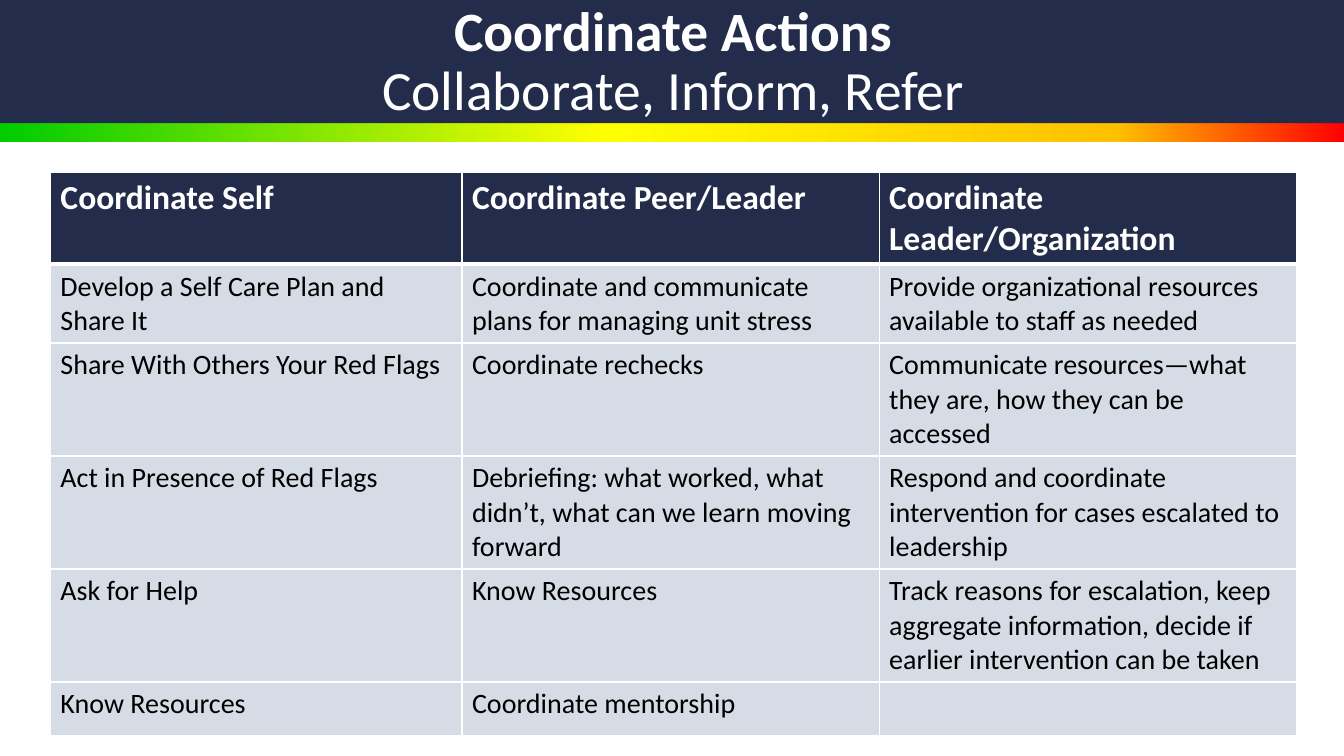
from lxml.etree import SubElement
from pptx import Presentation
from pptx.dml.color import RGBColor
from pptx.enum.shapes import MSO_SHAPE
from pptx.enum.text import MSO_ANCHOR, MSO_AUTO_SIZE, PP_ALIGN
from pptx.oxml.ns import qn
from pptx.util import Pt

# Content
TITLE = "Coordinate Actions"
SUBTITLE = "Collaborate, Inform, Refer"
ROWS = [
    ("Coordinate Self", "Coordinate Peer/Leader", "Coordinate Leader/Organization"),
    ("Develop a Self Care Plan and Share It",
     "Coordinate and communicate plans for managing unit stress",
     "Provide organizational resources available to staff as needed"),
    ("Share With Others Your Red Flags",
     "Coordinate rechecks",
     "Communicate resources—what they are, how they can be accessed"),
    ("Act in Presence of Red Flags",
     "Debriefing: what worked, what didn’t, what can we learn moving forward",
     "Respond and coordinate intervention for cases escalated to leadership"),
    ("Ask for Help",
     "Know Resources",
     "Track reasons for escalation, keep aggregate information, "
     "decide if earlier intervention can be taken"),
    ("Know Resources", "Coordinate mentorship", ""),
]

# Format
FONT = "Calibri"
NAVY, WHITE, BLACK, PALE = "232D4B", "FFFFFF", "000000", "D6DCE5"
RAINBOW = [(0, "00CC00"), (45, "FFFF00"), (83, "FFC000"), (100, "FF0000")]
WIDTH, HEIGHT = 960, 540
BANNER_H, STRIPE_H = 88, 13.5
TABLE_X, TABLE_Y = 36, 123
COL_WIDTHS = [294, 298, 298]
ROW_HEIGHTS = [65.8, 56, 80.5, 80.5, 80.5, 38]


def rgb(color):
    return RGBColor.from_string(color)


def add_text(p, text, size=20, color=BLACK, bold=False):
    r = p.add_run()
    r.text = text
    r.font.name = FONT
    r.font.size = Pt(size)
    r.font.bold = bold
    r.font.color.rgb = rgb(color)


def add_band(s, top, height):
    sp = s.shapes.add_shape(MSO_SHAPE.RECTANGLE, 0, Pt(top), Pt(WIDTH), Pt(height))
    sp.shadow.inherit = False
    sp.line.fill.background()
    return sp


def set_gradient(sp, stops):
    sp.fill.gradient()
    sp.fill.gradient_angle = 0
    gs_list = sp._element.spPr.find(qn("a:gradFill")).find(qn("a:gsLst"))
    for old in list(gs_list):
        gs_list.remove(old)
    for percent, color in stops:
        gs = SubElement(gs_list, qn("a:gs"), pos=str(percent * 1000))
        SubElement(gs, qn("a:srgbClr"), val=color)


def set_borders(cell, **widths):
    tc_pr = cell._tc.get_or_add_tcPr()
    for i, side in enumerate("LRTB"):
        ln = tc_pr.makeelement(qn("a:ln" + side), {"w": str(Pt(widths.get(side, 1)))})
        fill = SubElement(ln, qn("a:solidFill"))
        SubElement(fill, qn("a:srgbClr"), val=WHITE)
        tc_pr.insert(i, ln)  # borders come before the fill


prs = Presentation()
prs.slide_width, prs.slide_height = Pt(WIDTH), Pt(HEIGHT)
s = prs.slides.add_slide(prs.slide_layouts[5])

# Banner and gradient stripe
set_gradient(add_band(s, BANNER_H, STRIPE_H), RAINBOW)
banner = add_band(s, 0, BANNER_H)
banner.fill.solid()
banner.fill.fore_color.rgb = rgb(NAVY)

# Title, in front of the banner
title = s.shapes.title
title.left, title.top, title.width, title.height = Pt(67.5), Pt(5.5), Pt(826.5), Pt(79)
banner._element.addnext(title._element)
tf = title.text_frame
tf.word_wrap = True
tf.auto_size = MSO_AUTO_SIZE.NONE
tf.vertical_anchor = MSO_ANCHOR.MIDDLE
p = tf.paragraphs[0]
p.alignment = PP_ALIGN.CENTER
p.line_spacing = 0.9
add_text(p, TITLE, size=39.6, color=WHITE, bold=True)
p.add_line_break()
add_text(p, SUBTITLE, size=39.6, color=WHITE)

# Table of actions
table = s.shapes.add_table(len(ROWS), len(COL_WIDTHS), Pt(TABLE_X), Pt(TABLE_Y),
                           Pt(sum(COL_WIDTHS)), Pt(sum(ROW_HEIGHTS))).table
table.horz_banding = False
for column, width in zip(table.columns, COL_WIDTHS):
    column.width = Pt(width)
for i, (row, height) in enumerate(zip(ROWS, ROW_HEIGHTS)):
    table.rows[i].height = Pt(height)
    for j, text in enumerate(row):
        cell = table.cell(i, j)
        cell.fill.solid()
        cell.fill.fore_color.rgb = rgb(PALE if i else NAVY)
        set_borders(cell, T=3 if i == 1 else 1, B=1 if i else 3)
        p = cell.text_frame.paragraphs[0]
        if i == 0:
            add_text(p, text, size=24, color=WHITE, bold=True)
        elif text:
            add_text(p, text)

prs.save("out.pptx")
